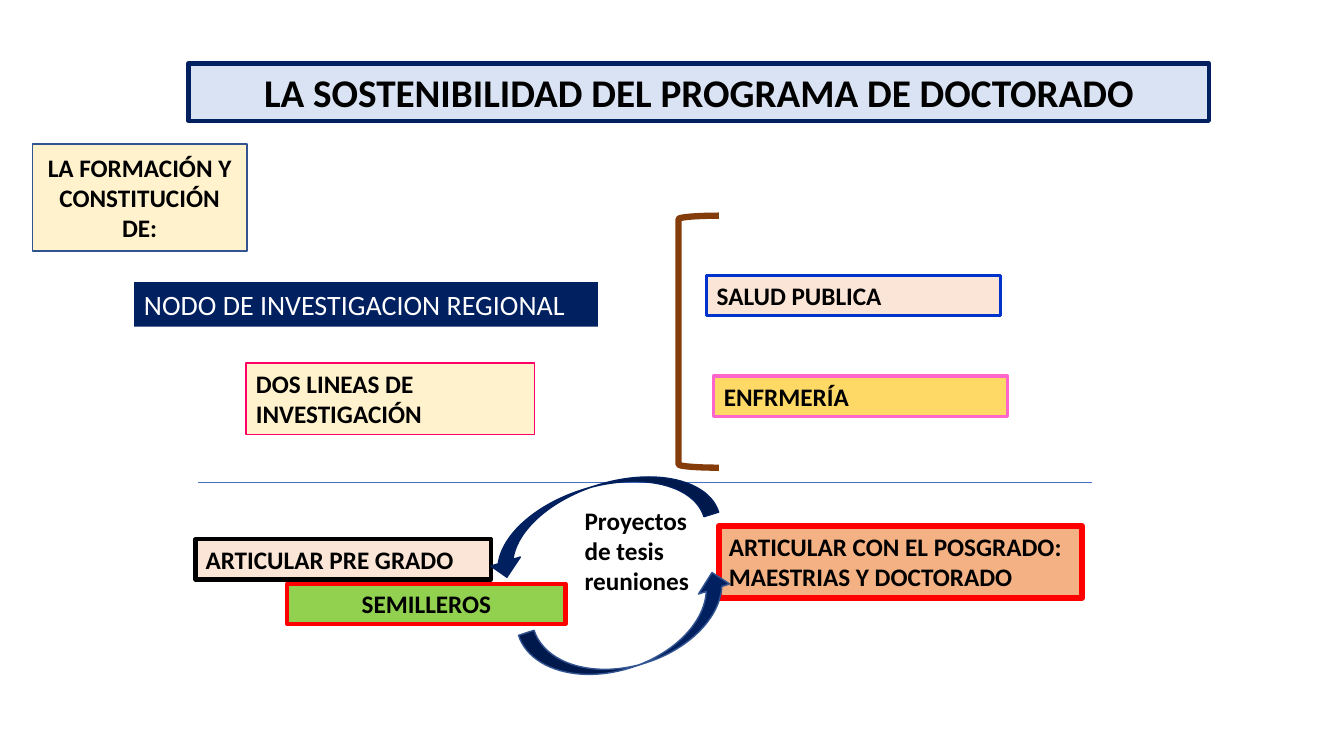
"""Build the slide on the sustainability of the doctoral programme."""
from pptx import Presentation, util as u
from pptx.dml.color import RGBColor
from pptx.enum import shapes as s, text as t
from pptx.oxml.ns import qn
from lxml import etree

PX = 9144
SLIDE = (1333, 750)

BLACK = RGBColor(0x00, 0x00, 0x00)
WHITE = RGBColor(0xFF, 0xFF, 0xFF)
NAVY = RGBColor(0x00, 0x20, 0x60)
PALE_BLUE = RGBColor(0xDA, 0xE3, 0xF3)
BLUE = RGBColor(0x00, 0x33, 0xCC)
STEEL = RGBColor(0x32, 0x54, 0x91)
RULE_BLUE = RGBColor(0x44, 0x72, 0xC4)
PEACH = RGBColor(0xFB, 0xE5, 0xD6)
ORANGE = RGBColor(0xF4, 0xB1, 0x83)
GOLD = RGBColor(0xFF, 0xD9, 0x66)
CREAM = RGBColor(0xFF, 0xF2, 0xCC)
PINK = RGBColor(0xFF, 0x66, 0xCC)
MAGENTA = RGBColor(0xFF, 0x00, 0x66)
BROWN = RGBColor(0x84, 0x3C, 0x0B)
GREEN = RGBColor(0x92, 0xD0, 0x50)
RED = RGBColor(0xFF, 0x00, 0x00)

LEFT, CENTER, JUSTIFY = t.PP_ALIGN.LEFT, t.PP_ALIGN.CENTER, t.PP_ALIGN.JUSTIFY
TOP, MIDDLE = t.MSO_ANCHOR.TOP, t.MSO_ANCHOR.MIDDLE
GROW, FIXED = t.MSO_AUTO_SIZE.SHAPE_TO_FIT_TEXT, t.MSO_AUTO_SIZE.NONE
KIND = s.MSO_SHAPE

BODY = {"name": "Calibri", "size": u.Pt(18), "bold": True}
TITLE = {**BODY, "size": u.Pt(28)}
NODE = {**BODY, "size": u.Pt(20), "bold": False}

TOPICS = [
    ("LA SOSTENIBILIDAD DEL PROGRAMA DE DOCTORADO",
     (187, 63, 1012, 57), PALE_BLUE, NAVY, 3, CENTER, TITLE, BLACK),
    ("NODO DE INVESTIGACION REGIONAL",
     (133, 280, 460, 44), NAVY, None, 0, LEFT, NODE, WHITE),
    ("SALUD PUBLICA", (701, 273, 291, 40), PEACH, BLUE, 2.25, JUSTIFY, BODY, BLACK),
    ("ENFRMERÍA", (708, 373, 291, 40), GOLD, PINK, 2.25, LEFT, BODY, BLACK),
    ("DOS LINEAS DE INVESTIGACIÓN",
     (244, 360, 286, 71), CREAM, MAGENTA, 1, LEFT, BODY, BLACK),
    ("ARTICULAR PRE GRADO", (194, 535, 293, 40), PEACH, BLACK, 3, LEFT, BODY, BLACK),
    ("ARTICULAR CON EL POSGRADO: MAESTRIAS Y DOCTORADO",
     (713, 522, 360, 71), ORANGE, RED, 4.5, LEFT, BODY, BLACK),
    ("SEMILLEROS", (285, 579, 276, 40), GREEN, RED, 3, CENTER, BODY, BLACK),
]
FORMATION = ("LA FORMACIÓN Y CONSTITUCIÓN DE:",
             (32, 143, 213, 106), CREAM, STEEL, 1, CENTER, BODY, BLACK)
MEETINGS = (["Proyectos de tesis", "reuniones"], (570, 496, 143, 101))
BRACKET = (KIND.LEFT_BRACKET, (673, 214, 40, 250), None, BROWN, 4.5, 0)
CYCLE = [
    (KIND.CURVED_UP_ARROW, (519, 595, 218, 65), NAVY, STEEL, 1, 342),
    (KIND.CURVED_RIGHT_ARROW, (561, 396, 61, 235), NAVY, NAVY, 1, 72.9),
]
DIVIDER = (196, 479, 1083, 479)


def emu(lengths):
    return [length * PX for length in lengths]


def write(box, lines, align, font, color, anchor=TOP, fit=GROW):
    frame = box.text_frame
    frame.text = "\n".join(lines)
    layout = {"word_wrap": True, "vertical_anchor": anchor, "auto_size": fit}
    for key, value in layout.items():
        setattr(frame, key, value)
    for paragraph in frame.paragraphs:
        paragraph.alignment = align
        for run in paragraph.runs:
            for key, value in font.items():
                setattr(run.font, key, value)
            run.font.color.rgb = color


def draw(slide, kind, place, fill, outline, weight, turn=0):
    figure = slide.shapes.add_shape(kind, *emu(place))
    figure.shadow.inherit = False
    figure.rotation = turn
    if fill is None:
        figure.fill.background()
    else:
        figure.fill.solid()
        figure.fill.fore_color.rgb = fill
    if outline is None:
        figure.line.fill.background()
    else:
        figure.line.color.rgb = outline
        figure.line.width = u.Pt(weight)
    return figure


def label(slide, topic, anchor=TOP, fit=GROW):
    words, place, fill, outline, weight, align, font, color = topic
    box = draw(slide, KIND.RECTANGLE, place, fill, outline, weight)
    write(box, [words], align, font, color, anchor, fit)


def main():
    deck = Presentation()
    deck.slide_width, deck.slide_height = emu(SLIDE)
    slide = deck.slides.add_slide(deck.slide_layouts[6])

    draw(slide, *BRACKET)
    divider = slide.shapes.add_connector(s.MSO_CONNECTOR.STRAIGHT, *emu(DIVIDER))
    divider.line.color.rgb = RULE_BLUE
    divider.line.width = u.Pt(0.5)
    etree.SubElement(divider._element.spPr, qn("a:effectLst"))

    for topic in TOPICS:
        label(slide, topic)
    for arrow in CYCLE:
        draw(slide, *arrow)
    label(slide, FORMATION, MIDDLE, FIXED)
    lines, place = MEETINGS
    write(slide.shapes.add_textbox(*emu(place)), lines, LEFT, BODY, BLACK)

    deck.save("out.pptx")


if __name__ == "__main__":
    main()
